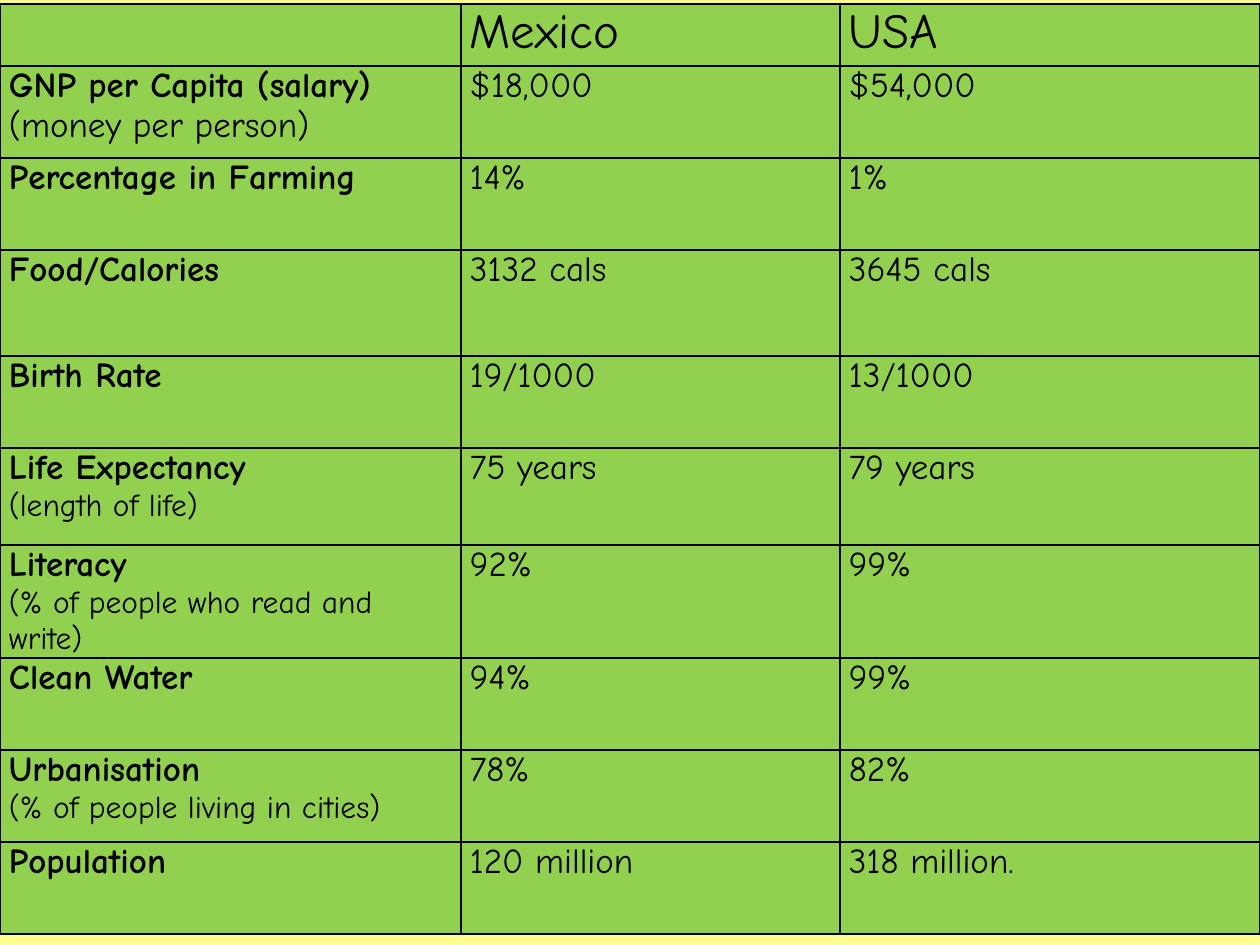
from lxml.etree import SubElement
from pptx import Presentation
from pptx.dml.color import RGBColor
from pptx.oxml.ns import qn
from pptx.util import Pt

EMU_PER_PX = 914400 / 126
PAGE_SIZE = (1260, 945)
TABLE_BOX = (0, 4, 1260, 936)
COLUMN_WIDTHS = (461, 379, 420)
ROW_HEIGHTS = (62, 92, 92, 106, 92, 97, 92, 92, 92, 92)
CELL_INSET = 9

FONT = "Comic Neue"
HEADER_SIZE, BODY_SIZE, NOTE_SIZE = 28, 20, 18
BLACK = RGBColor(0x00, 0x00, 0x00)
GREEN = RGBColor(0x92, 0xD0, 0x50)
PALE_YELLOW = RGBColor(0xFF, 0xFF, 0x91)

COUNTRIES = ("Mexico", "USA")
# Indicator, its explanation, size of the explanation, value for each country
INDICATORS = (
    ("GNP per Capita (salary)", "(money per person)", BODY_SIZE, "$18,000", "$54,000"),
    ("Percentage in Farming", "", NOTE_SIZE, "14%", "1%"),
    ("Food/Calories", "", NOTE_SIZE, "3132 cals", "3645 cals"),
    ("Birth Rate", "", NOTE_SIZE, "19/1000", "13/1000"),
    ("Life Expectancy", "(length of life)", NOTE_SIZE, "75 years", "79 years"),
    ("Literacy", "(% of people who read and write)", NOTE_SIZE, "92%", "99%"),
    ("Clean Water", "", NOTE_SIZE, "94%", "99%"),
    ("Urbanisation", "(% of people living in cities)", NOTE_SIZE, "78%", "82%"),
    ("Population", "", NOTE_SIZE, "120 million", "318 million."),
)


def px(length):
    return round(length * EMU_PER_PX)


def add_span(para, text, size, bold=False):
    span = para.add_run()
    span.text = text
    span.font.name = FONT
    span.font.size = Pt(size)
    span.font.bold = bold
    span.font.color.rgb = BLACK


def style_cell(cell):
    """Set the insets, a thin black border on every side, and the fill."""
    cell.margin_left = cell.margin_right = px(CELL_INSET)
    cell.margin_top = cell.margin_bottom = 0
    properties = cell._tc.get_or_add_tcPr()
    for side in ("a:lnL", "a:lnR", "a:lnT", "a:lnB"):
        line = SubElement(properties, qn(side), w=str(Pt(1)))
        fill = SubElement(line, qn("a:solidFill"))
        SubElement(fill, qn("a:srgbClr"), val=str(BLACK))
    cell.fill.solid()
    cell.fill.fore_color.rgb = GREEN


def add_comparison_table(page, box):
    left, top, width, height = map(px, box)
    frame = page.shapes.add_table(
        len(ROW_HEIGHTS), len(COLUMN_WIDTHS), left, top, width, height)
    table = frame.table
    table.first_row = table.horz_banding = False
    for column, column_width in zip(table.columns, COLUMN_WIDTHS):
        column.width = px(column_width)
    for row, row_height in zip(table.rows, ROW_HEIGHTS):
        row.height = px(row_height)
    frame.height = height
    for cell in table.iter_cells():
        style_cell(cell)

    for column, country in enumerate(COUNTRIES, 1):
        add_span(table.cell(0, column).text_frame.paragraphs[0], country, HEADER_SIZE)
    for row, (name, note, note_size, *values) in enumerate(INDICATORS, 1):
        label = table.cell(row, 0).text_frame
        add_span(label.paragraphs[0], name, BODY_SIZE, bold=True)
        if note:
            add_span(label.add_paragraph(), note, note_size)
        for column, value in enumerate(values, 1):
            add_span(table.cell(row, column).text_frame.paragraphs[0], value, BODY_SIZE)


def main():
    deck = Presentation()
    deck.slide_width, deck.slide_height = map(px, PAGE_SIZE)
    page = deck.slides.add_slide(deck.slide_layouts[6])
    page.background.fill.solid()
    page.background.fill.fore_color.rgb = PALE_YELLOW
    add_comparison_table(page, TABLE_BOX)
    deck.save("out.pptx")


if __name__ == "__main__":
    main()
